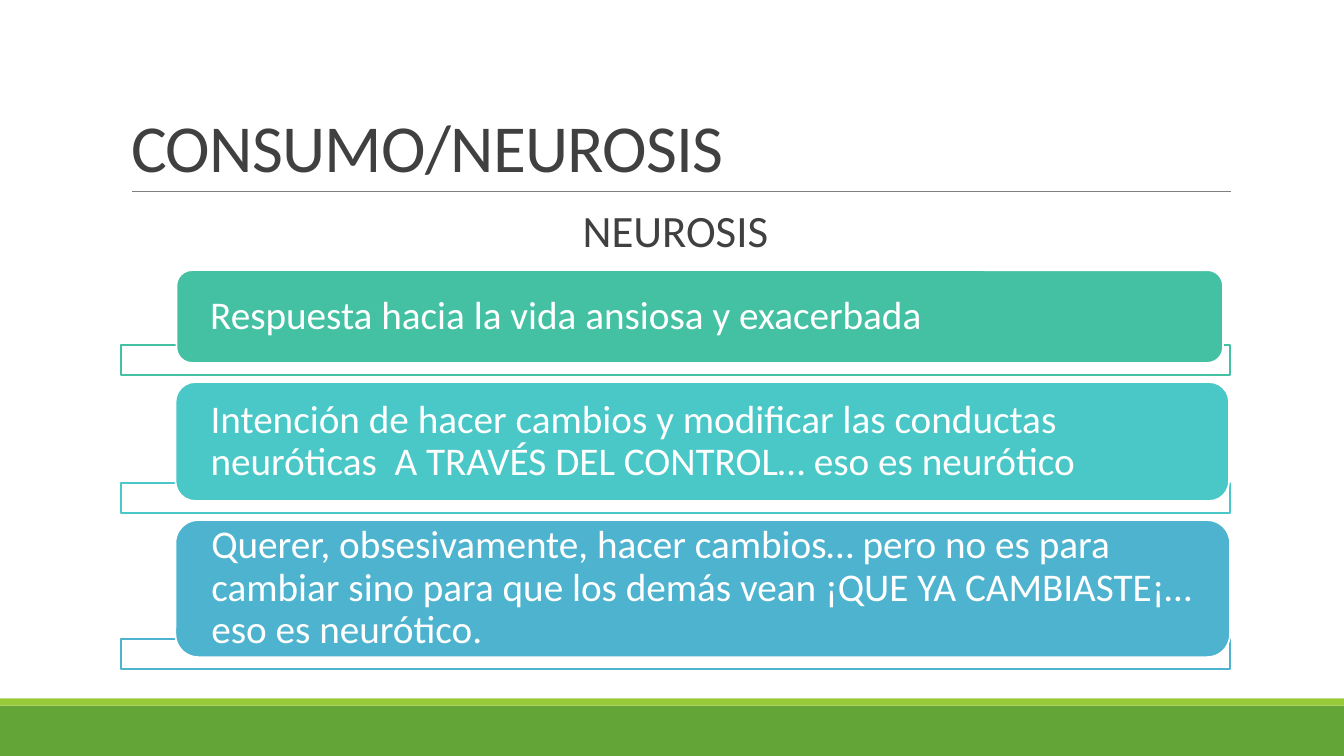
from dataclasses import dataclass

from lxml import etree
from pptx import Presentation
from pptx import util as u
from pptx.dml.color import RGBColor
from pptx.enum import shapes, text
from pptx.oxml import ns

PX = 9144  # 100 px to the inch
FONT = "Calibri"
WHITE = RGBColor(0xFF, 0xFF, 0xFF)
INK = RGBColor(0x40, 0x40, 0x40)
RULE = RGBColor(0x80, 0x80, 0x80)
GREEN = RGBColor(0x63, 0xA5, 0x37)
LIME = RGBColor(0x99, 0xCB, 0x38)
JADE = RGBColor(0x44, 0xC1, 0xA3)
TURQUOISE = RGBColor(0x49, 0xC8, 0xC7)
BLUE = RGBColor(0x4E, 0xB3, 0xCF)

PAGE_WIDTH, PAGE_HEIGHT = 1333, 750
CONTENT_LEFT, CONTENT_WIDTH = 120, 1100
TRAY_HEIGHT = 30
TRAY_DROP = 12  # how far a tray reaches below its card


@dataclass(frozen=True)
class Box:
    left: int
    top: int
    width: int
    height: int

    def emu(self) -> list[int]:
        return [side * PX for side in (self.left, self.top, self.width, self.height)]


@dataclass(frozen=True)
class Card:
    box: Box
    color: RGBColor
    words: str


BANDS = [
    (Box(0, 700, PAGE_WIDTH, 50), GREEN),
    (Box(0, 693, PAGE_WIDTH, 7), LIME),
]
CARDS = [
    Card(Box(175, 268, 1038, 92), JADE,
         "Respuesta hacia la vida ansiosa y exacerbada"),
    Card(Box(174, 379, 1045, 118), TURQUOISE,
         "Intención de hacer cambios y modificar las conductas neuróticas"
         "  A TRAVÉS DEL CONTROL… eso es neurótico"),
    Card(Box(174, 516, 1046, 136), BLUE,
         "Querer, obsesivamente, hacer cambios… pero no es para cambiar sino "
         "para que los demás vean ¡QUE YA CAMBIASTE¡…eso es neurótico."),
]


def apply(target, formats: dict) -> None:
    for name, value in formats.items():
        setattr(target, name, value)


def write(shape, words: str, size: int, color: RGBColor, frame: dict, para: dict):
    """Fill a shape with one formatted paragraph and return its span."""
    text_frame = shape.text_frame
    apply(text_frame, {"word_wrap": True, "auto_size": text.MSO_AUTO_SIZE.NONE} | frame)
    paragraph = text_frame.paragraphs[0]
    apply(paragraph, para)
    span = paragraph.add_run()
    span.text = words
    apply(span.font, {"name": FONT, "size": u.Pt(size)})
    span.font.color.rgb = color
    return span


def place(shape, box: Box) -> None:
    apply(shape, dict(zip(("left", "top", "width", "height"), box.emu())))


def add_block(page, kind, box: Box, fill: RGBColor, line: RGBColor | None = None):
    shape = page.shapes.add_shape(kind, *box.emu())
    shape.shadow.inherit = False
    shape.fill.solid()
    shape.fill.fore_color.rgb = fill
    if line is None:
        shape.line.fill.background()
    else:
        shape.line.color.rgb = line
        shape.line.width = u.Pt(1.25)
    return shape


def add_rule(page, left: int, right: int, y: int) -> None:
    rule = page.shapes.add_connector(
        shapes.MSO_CONNECTOR.STRAIGHT, left * PX, y * PX, right * PX, y * PX)
    rule.line.color.rgb = RULE
    rule.line.width = u.Pt(0.5)
    etree.SubElement(rule._element.spPr, ns.qn("a:effectLst"))


def add_card(page, card: Card) -> None:
    """Draw the outlined tray, then the rounded card over it."""
    box = card.box
    tray_top = box.top + box.height + TRAY_DROP - TRAY_HEIGHT
    tray = add_block(page, shapes.MSO_SHAPE.RECTANGLE,
                     Box(CONTENT_LEFT, tray_top, CONTENT_WIDTH, TRAY_HEIGHT),
                     WHITE, card.color)
    tint = tray._element.spPr.find(ns.qn("a:solidFill"))[0]
    etree.SubElement(tint, ns.qn("a:alpha"), val="90000")

    block = add_block(page, shapes.MSO_SHAPE.ROUNDED_RECTANGLE, box, card.color, WHITE)
    frame = {"vertical_anchor": text.MSO_ANCHOR.MIDDLE,
             "margin_left": 29 * PX, "margin_right": 29 * PX,
             "margin_top": 0, "margin_bottom": 0}
    write(block, card.words, 28, WHITE, frame,
          {"alignment": text.PP_ALIGN.LEFT, "line_spacing": 0.9})


def add_headings(page) -> None:
    title, body = page.placeholders
    place(title, Box(CONTENT_LEFT, 31, CONTENT_WIDTH, 159))
    span = write(title, "CONSUMO/NEUROSIS", 48, INK,
                 {"vertical_anchor": text.MSO_ANCHOR.BOTTOM},
                 {"alignment": text.PP_ALIGN.LEFT, "line_spacing": 0.85})
    span.font._element.set("spc", "-50")

    place(body, Box(CONTENT_LEFT, 202, CONTENT_WIDTH, 440))
    write(body, "NEUROSIS", 32, INK,
          {"vertical_anchor": text.MSO_ANCHOR.TOP, "margin_left": 0, "margin_right": 0},
          {"alignment": text.PP_ALIGN.CENTER, "line_spacing": 0.9,
           "space_before": u.Pt(12), "space_after": u.Pt(2)})
    properties = body.text_frame.paragraphs[0]._p.get_or_add_pPr()
    apply_indent = {"marL": "0", "indent": "0"}
    for name, value in apply_indent.items():
        properties.set(name, value)
    etree.SubElement(properties, ns.qn("a:buNone"))


def main() -> None:
    deck = Presentation()
    apply(deck, {"slide_width": PAGE_WIDTH * PX, "slide_height": PAGE_HEIGHT * PX})
    page = deck.slides.add_slide(deck.slide_layouts[1])
    for box, color in BANDS:
        add_block(page, shapes.MSO_SHAPE.RECTANGLE, box, color)
    add_rule(page, 131, 1221, 190)
    add_headings(page)
    for card in CARDS:
        add_card(page, card)
    deck.save("out.pptx")


if __name__ == "__main__":
    main()
